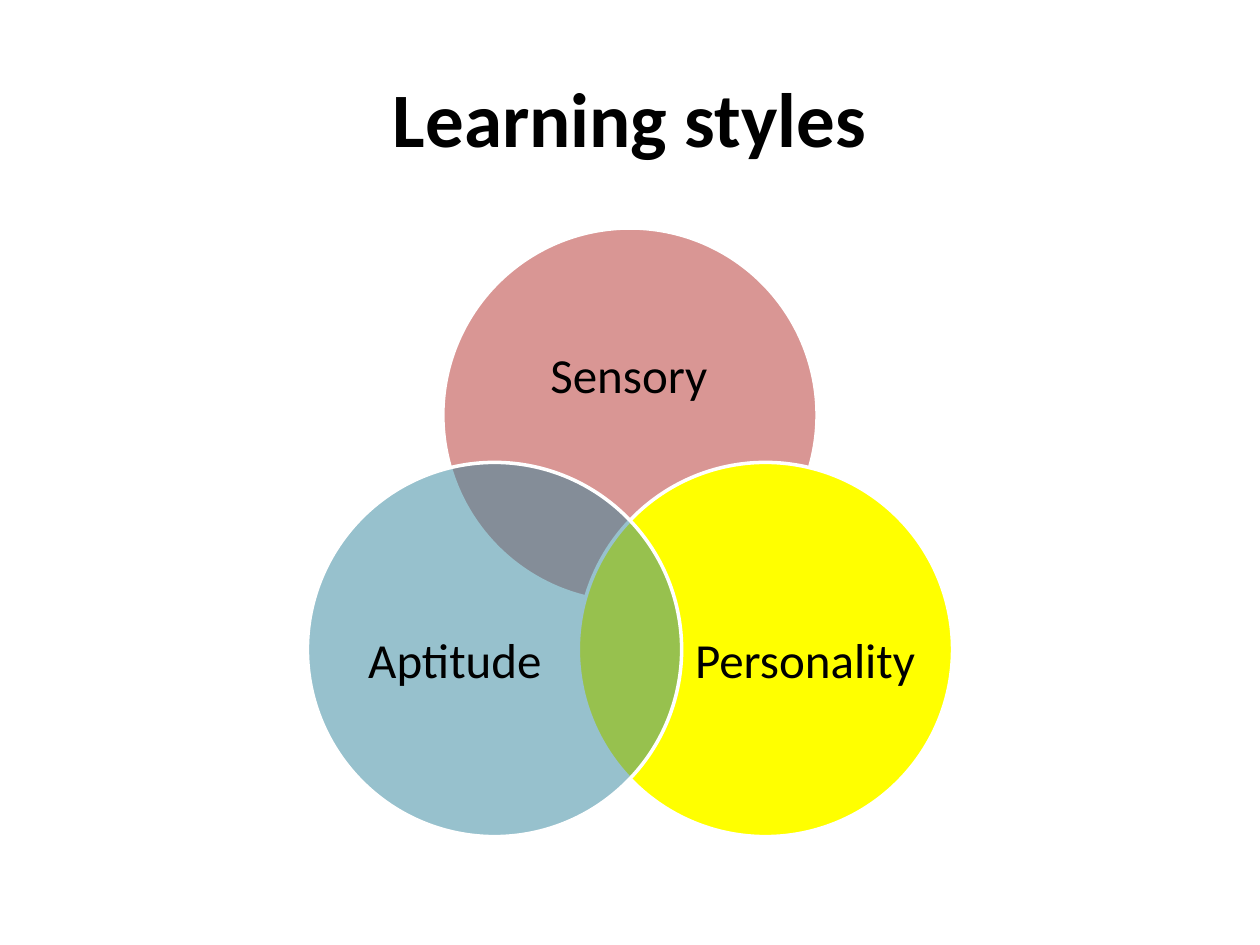
from lxml import etree
from pptx import Presentation
from pptx.dml.color import RGBColor
from pptx.enum.shapes import MSO_SHAPE as Shape
from pptx.enum.text import MSO_ANCHOR as Anchor, PP_ALIGN as Align
from pptx.oxml.ns import qn
from pptx.util import Inches, Pt


def color(hex_value):
    return RGBColor.from_string(hex_value)


def write(frame, text, size=28, bold=False, margin=None, line_spacing=None, space_after=None):
    frame.word_wrap = True
    frame.vertical_anchor = Anchor.MIDDLE
    if margin is not None:
        frame.margin_left = frame.margin_right = Inches(margin)
        frame.margin_top = frame.margin_bottom = Inches(margin)
    paragraph = frame.paragraphs[0]
    paragraph.alignment = Align.CENTER
    paragraph.line_spacing = line_spacing
    if space_after is not None:
        paragraph.space_after = Pt(space_after)
    run = paragraph.add_run()
    run.text = text
    run.font.name = "Calibri"
    run.font.size = Pt(size)
    run.font.bold = bold
    run.font.color.rgb = color("000000")


def add_heading(slide, text, left, top, width, height):
    heading = slide.shapes.title
    heading.left, heading.top = Inches(left), Inches(top)
    heading.width, heading.height = Inches(width), Inches(height)
    write(heading.text_frame, text, size=44, bold=True)


def add_circle(shapes, left, top, diameter, fill, opacity):
    circle = shapes.add_shape(Shape.OVAL, Inches(left), Inches(top),
                              Inches(diameter), Inches(diameter))
    circle.shadow.inherit = False
    circle.fill.solid()
    circle.fill.fore_color.rgb = color(fill)
    circle.line.color.rgb = color("FFFFFF")
    circle.line.width = Pt(2)
    if opacity < 100:
        fill_color = circle.fill._xPr.find(qn("a:solidFill"))[0]
        etree.SubElement(fill_color, qn("a:alpha"), val=str(opacity * 1000))


def add_venn(slide, left, top, width, height, diameter):
    shapes = slide.shapes.add_group_shape().shapes
    right, middle = width - diameter, (width - diameter) / 2
    bottom = height - diameter
    top_label = (0.13, 0.175, 0.734, 0.45)
    right_label = (0.306, 0.26, 0.6, 0.55)
    left_label = (0.094, 0.26, 0.6, 0.55)
    # Circle offset, fill, opacity in percent, label box in diameters
    styles = [
        ("Sensory", middle, 0, "D99694", 100, top_label),
        ("Personality", right, bottom, "FFFF00", 100, right_label),
        ("Aptitude", 0, bottom, "31859C", 50, left_label),
    ]
    for name, dx, dy, fill, opacity, label_box in styles:
        x, y = left + dx, top + dy
        add_circle(shapes, x, y, diameter, fill, opacity)
        label_x, label_y, label_width, label_height = (part * diameter for part in label_box)
        label = shapes.add_textbox(Inches(x + label_x), Inches(y + label_y),
                                   Inches(label_width), Inches(label_height))
        write(label.text_frame, name, margin=0, line_spacing=0.9, space_after=9.8)


def main():
    prs = Presentation()
    prs.slide_width, prs.slide_height = Inches(10), Inches(7.5)
    slide = prs.slides.add_slide(prs.slide_layouts[5])
    slide.background.fill.solid()
    slide.background.fill.fore_color.rgb = color("FFFFFF")
    add_heading(slide, "Learning styles", left=0.5, top=0.3, width=9, height=1.25)
    add_venn(slide, left=2.44, top=1.81, width=5.12, height=4.83, diameter=2.97)
    prs.save("out.pptx")


if __name__ == "__main__":
    main()
